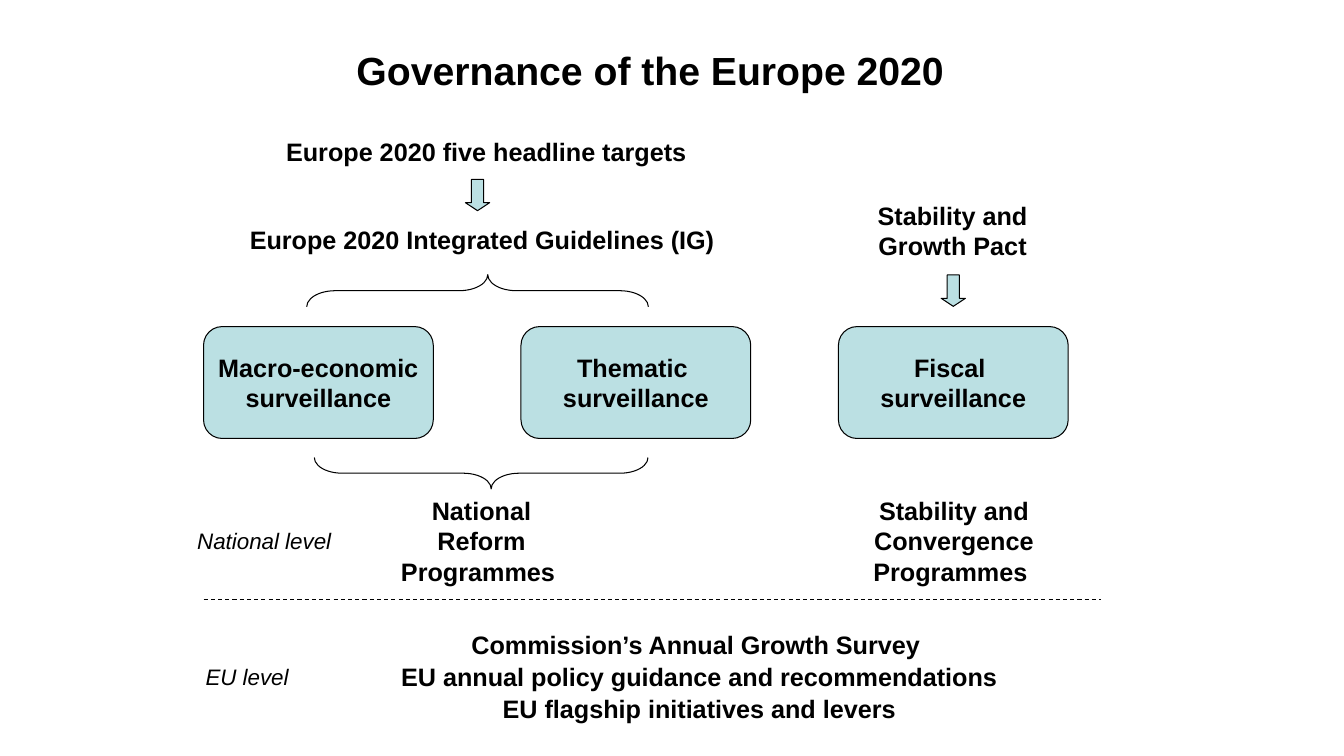
import pptx
import pptx.dml.color
import pptx.enum.dml
import pptx.enum.shapes
import pptx.enum.text
import pptx.oxml
import pptx.oxml.ns
import pptx.util

Cm = pptx.util.Cm
Pt = pptx.util.Pt
Shapes = pptx.enum.shapes.MSO_SHAPE
Anchor = pptx.enum.text.MSO_ANCHOR
Align = pptx.enum.text.PP_ALIGN

BLACK = pptx.dml.color.RGBColor(0x00, 0x00, 0x00)
PALE_TEAL = pptx.dml.color.RGBColor(0xBB, 0xE0, 0xE3)


class Diagram:
    """Draws styled elements on one slide; all lengths are in centimetres."""

    font = "Arial"
    line_width = Pt(0.75)

    def __init__(self, slide):
        self.shapes = slide.shapes

    def set_text(self, frame, text, size=18, bold=True, italic=False,
                 align=Align.CENTER, anchor=Anchor.MIDDLE, wrap=False, spacing=None):
        frame.word_wrap = wrap
        frame.vertical_anchor = anchor
        frame.text = text
        for paragraph in frame.paragraphs:
            paragraph.alignment = align
            paragraph.line_spacing = spacing
            font = paragraph.font
            font.name, font.size = self.font, Pt(size)
            font.bold, font.italic = bold, italic
            font.color.rgb = BLACK

    def label(self, text, left, top, width, height, **style):
        box = self.shapes.add_textbox(Cm(left), Cm(top), Cm(width), Cm(height))
        self.set_text(box.text_frame, text, **style)
        return box.text_frame

    def level(self, text, left, top, width):
        self.label(text, left, top, width, 0.94, size=16, bold=False, italic=True,
                   align=Align.LEFT, anchor=Anchor.TOP, wrap=True)

    def outline(self, kind, left, top, width, height, fill=None):
        shape = self.shapes.add_shape(kind, Cm(left), Cm(top), Cm(width), Cm(height))
        shape.shadow.inherit = False
        if fill is None:
            shape.fill.background()
        else:
            shape.fill.solid()
            shape.fill.fore_color.rgb = fill
        shape.line.color.rgb = BLACK
        shape.line.width = self.line_width
        return shape

    def surveillance(self, text, left):
        box = self.outline(Shapes.FLOWCHART_ALTERNATE_PROCESS,
                           left, 8.23, 5.79, 2.82, PALE_TEAL)
        self.set_text(box.text_frame, text)

    def down_arrow(self, left, top):
        arrow = self.outline(Shapes.DOWN_ARROW, left, top, 0.61, 0.79, PALE_TEAL)
        arrow.adjustments[0] = 0.5
        arrow.adjustments[1] = 0.33

    def brace(self, left, top, width, height, rotation, tip):
        brace = self.outline(Shapes.RIGHT_BRACE, left, top, width, height)
        brace.rotation = rotation
        brace.adjustments[0] = 0.89
        brace.adjustments[1] = tip

    def divider(self, left, right, y):
        line = self.shapes.add_connector(pptx.enum.shapes.MSO_CONNECTOR.STRAIGHT,
                                         Cm(left), Cm(y), Cm(right), Cm(y))
        line.line.color.rgb = BLACK
        line.line.width = self.line_width
        line.line.dash_style = pptx.enum.dml.MSO_LINE.DASH
        no_shadow = pptx.oxml.parse_xml(
            "<a:effectLst %s/>" % pptx.oxml.ns.nsdecls("a"))
        line._element.spPr.append(no_shadow)


def main():
    deck = pptx.Presentation()
    deck.slide_width, deck.slide_height = Cm(33.87), Cm(19.05)
    diagram = Diagram(deck.slides.add_slide(deck.slide_layouts[6]))

    # Title, set slightly left of and below the middle of its box
    title = diagram.label("Governance of the Europe 2020", 5.74, 0.53, 22, 1.98,
                          size=28, wrap=True)
    title.margin_right = Cm(0.96)
    title.margin_top = Cm(0.63)

    # Targets, guidelines and pact
    diagram.label("Europe 2020 five headline targets ", 5.74, 3.12, 13.21, 1.4)
    diagram.label("Europe 2020 Integrated Guidelines (IG) ", 5.74, 5.33, 13, 1.4)
    diagram.label("Stability and \vGrowth Pact ", 21.54, 4.52, 5.11, 2.59)
    diagram.down_arrow(11.73, 4.52)
    diagram.down_arrow(23.72, 6.93)

    # Three kinds of surveillance, the first two joined by braces
    kinds = ("Macro-economic\nsurveillance", "Thematic \vsurveillance",
             "Fiscal \vsurveillance")
    for column, kind in enumerate(kinds):
        diagram.surveillance(kind, 5.13 + 8 * column)
    diagram.brace(11.63, 3.02, 0.81, 8.61, rotation=270, tip=0.53)
    diagram.brace(11.73, 7.72, 0.79, 8.41, rotation=90, tip=0.47)

    # National level
    diagram.level("National level", 4.72, 13.16, 3.99)
    diagram.label("National Reform Programmes ", 9.53, 12.83, 5.21, 1.6, wrap=True)
    diagram.label("Stability and Convergence Programmes ", 21.54, 12.83, 5, 1.6,
                  wrap=True)
    diagram.divider(5.13, 27.74, 15.11)

    # EU level
    diagram.level("EU level", 4.93, 16.59, 3.3)
    diagram.label("Commission’s Annual Growth Survey \n"
                  "EU annual policy guidance and recommendations\n"
                  "EU flagship initiatives and levers",
                  6.73, 16.33, 21.79, 1.4, spacing=1.05)

    deck.save("out.pptx")


if __name__ == "__main__":
    main()
